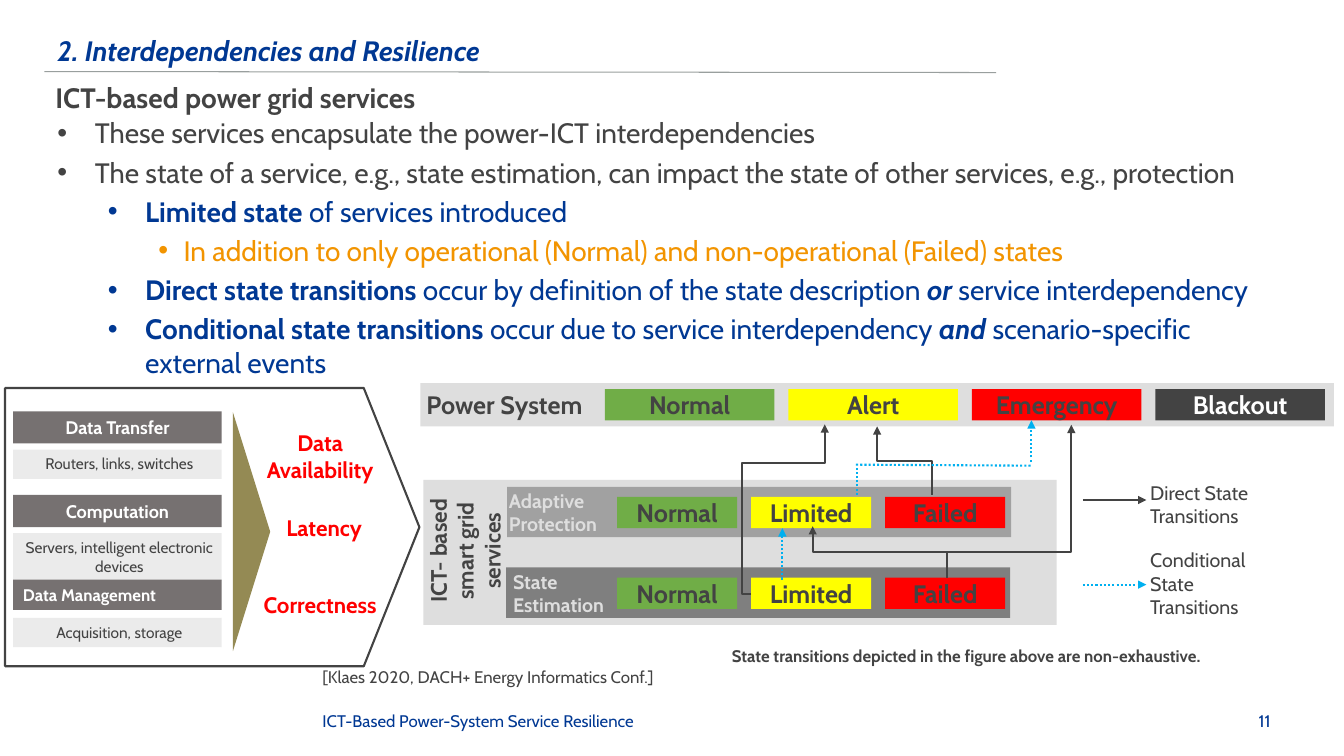
from dataclasses import dataclass

from lxml.etree import SubElement as Sub
from pptx import Presentation
from pptx.dml.color import RGBColor as Rgb
from pptx.enum.dml import MSO_LINE as Dash
from pptx.enum.shapes import MSO_CONNECTOR as Link, MSO_SHAPE as Form
from pptx.enum.text import MSO_ANCHOR as Anchor, MSO_AUTO_SIZE as Fit, PP_ALIGN as Align
from pptx.oxml.ns import qn
from pptx.shapes.shapetree import SlideShapes as Tree
from pptx.text.text import TextFrame as Frame
from pptx.util import Inches, Pt

FONT = "Cabin"
HUES = {
    "blue": "003893", "dark": "434343", "orange": "F29400", "rule": "999F9E",
    "sky": "00B0F0", "pale": "DEDEDE", "mid": "A1A1A1", "deep": "7F7F7F",
    "green": "70AD47", "yellow": "FFFF00", "red": "FF0000", "white": "FFFFFF",
    "head": "767171", "light": "D9D9D9", "olive": "948A54",
}
WIDE = (0.1, 0.05, 0.1, 0.05)
SLIM = (0.08, 0.04, 0.08, 0.04)


@dataclass
class Block:
    """A box or label; place is left, top, width, height."""
    place: tuple[float, float, float, float]
    text: str = ""
    size: float = 14
    hue: str = "dark"
    bold: bool = False
    align: Align = Align.LEFT
    anchor: Anchor = Anchor.TOP
    pad: tuple[float, float, float, float] = WIDE
    fill: str = ""
    edge: str = ""
    form: Form | None = None
    turn: float = 0
    bend: float | None = None
    alpha: int = 100


@dataclass
class Wire:
    """A straight line or arrow."""
    start: tuple[float, float]
    end: tuple[float, float]
    hue: str = "dark"
    width: float = 1.5
    dots: bool = False
    arrow: bool = True


@dataclass
class Elbow:
    """A bent arrow, framed before it is turned and flipped."""
    place: tuple[float, float, float, float]
    turn: int
    flips: str
    bends: tuple[float, ...]


@dataclass
class Point:
    """A list entry; bits pair the text with b and i marks."""
    level: int
    hue: str
    bits: list[tuple[str, str]]


def tint(name: str) -> Rgb:
    return Rgb.from_string(HUES[name])


def set_frame(frame: Frame, pad: tuple = WIDE, anchor: Anchor = Anchor.TOP) -> None:
    frame.word_wrap, frame.auto_size = True, Fit.NONE
    frame.vertical_anchor = anchor
    (frame.margin_left, frame.margin_top,
     frame.margin_right, frame.margin_bottom) = map(Inches, pad)


def style(run, size: float, hue: str, bold: bool, slant: bool = False) -> None:
    font = run.font
    font.name, font.size, font.bold, font.italic = FONT, Pt(size), bold, slant
    font.color.rgb = tint(hue)


def draw(tree: Tree, item: Block) -> None:
    place = map(Inches, item.place)
    if item.form is None:
        shape = tree.add_textbox(*place)
    else:
        shape = tree.add_shape(item.form, *place)
        shape.shadow.inherit = False
        if item.fill:
            shape.fill.solid()
            shape.fill.fore_color.rgb = tint(item.fill)
        else:
            shape.fill.background()
        if item.edge:
            shape.line.color.rgb = tint(item.edge)
            shape.line.width = Pt(1.5)
        else:
            shape.line.fill.background()
        if item.bend is not None:
            shape.adjustments[0] = item.bend
        if item.alpha < 100:
            tone = shape._element.spPr.find(f"{qn('a:solidFill')}/{qn('a:srgbClr')}")
            Sub(tone, qn("a:alpha"), val=str(item.alpha * 1000))
    shape.rotation = item.turn
    if item.text:
        frame = shape.text_frame
        set_frame(frame, item.pad, item.anchor)
        frame.text = item.text
        for par in frame.paragraphs:
            par.alignment = item.align
            for run in par.runs:
                style(run, item.size, item.hue, item.bold)


def draw_wire(tree: Tree, item: Wire, kind: Link = Link.STRAIGHT):
    wire = tree.add_connector(kind, *map(Inches, item.start + item.end))
    wire.line.color.rgb = tint(item.hue)
    wire.line.width = Pt(item.width)
    if item.dots:
        wire.line.dash_style = Dash.ROUND_DOT
    props = wire._element.spPr
    if item.arrow:
        Sub(props.find(qn("a:ln")), qn("a:tailEnd"), type="triangle")
    Sub(props, qn("a:effectLst"))
    return wire


def draw_elbow(tree: Tree, item: Elbow) -> None:
    x, y, w, h = item.place
    wire = draw_wire(tree, Wire((x, y), (x + w, y + h)), Link.ELBOW)
    props = wire._element.spPr
    frame, shape = props.find(qn("a:xfrm")), props.find(qn("a:prstGeom"))
    frame.set("rot", str(item.turn * 60000))
    for flip in item.flips:
        frame.set("flip" + flip, "1")
    shape.set("prst", f"bentConnector{len(item.bends) + 2}")
    guides = shape.find(qn("a:avLst"))
    for num, bend in enumerate(item.bends, 1):
        Sub(guides, qn("a:gd"), name=f"adj{num}", fmla=f"val {round(bend * 100000)}")


def fill_list(frame: Frame, points: list[Point]) -> None:
    set_frame(frame)
    dents = [(0.37, 0.37), (0.87, 0.37), (1.25, 0.25)]
    for num, point in enumerate(points):
        par = frame.add_paragraph() if num else frame.paragraphs[0]
        left, hang = dents[point.level]
        props = par._p.get_or_add_pPr()
        props.set("marL", str(Inches(left)))
        props.set("indent", str(-Inches(hang)))
        Sub(props, qn("a:buFont"), typeface="Arial")
        Sub(props, qn("a:buChar"), char="•")
        par.level = point.level
        par.space_before = Pt(4 if num else 0)
        for text, marks in point.bits:
            run = par.add_run()
            run.text = text
            style(run, 20, point.hue, "b" in marks, "i" in marks)


def state(x: float, y: float, w: float, text: str, fill: str, hue: str = "dark") -> Block:
    return Block((x, y, w, 0.31), text, 18, hue, True, Align.CENTER, Anchor.MIDDLE,
                 SLIM, fill, form=Form.RECTANGLE)


def panel(place: tuple, fill: str) -> Block:
    return Block(place, fill=fill, form=Form.RECTANGLE)


def main() -> None:
    deck = Presentation()
    deck.slide_width, deck.slide_height = Inches(13.33), Inches(7.5)
    slide = deck.slides.add_slide(deck.slide_layouts[1])
    tree = slide.shapes
    draw_wire(tree, Wire((0.44, 0.71), (9.88, 0.72), "rule", 0.75, arrow=False))

    # Title and list
    title, body = tree.title, slide.placeholders[1]
    for holder, place in ((title, (0.47, 0.27, 9.55, 0.45)), (body, (0.47, 1.1, 12.39, 5.41))):
        holder.left, holder.top, holder.width, holder.height = map(Inches, place)
    title.text_frame.text = "2. Interdependencies and Resilience"
    set_frame(title.text_frame, anchor=Anchor.MIDDLE)
    head = title.text_frame.paragraphs[0]
    head.alignment = Align.LEFT
    style(head.runs[0], 20, "blue", True, True)
    fill_list(body.text_frame, [
        Point(0, "dark", [("These services encapsulate the power-ICT interdependencies", "")]),
        Point(0, "dark", [("The state of a service, e.g., state estimation, can impact "
                           "the state of other services, e.g., protection", "")]),
        Point(1, "blue", [("Limited state", "b"), (" of services introduced", "")]),
        Point(2, "orange", [("In addition to only operational (Normal) and "
                             "non-operational (Failed) states", "")]),
        Point(1, "blue", [("Direct state transitions ", "b"),
                          ("occur by definition of the state description ", ""),
                          ("or", "bi"), (" service interdependency", "")]),
        Point(1, "blue", [("Conditional state transitions", "b"),
                          (" occur due to service interdependency ", ""),
                          ("and", "bi"), (" scenario-specific external events", "")]),
    ])

    # Legend
    for y, hue, top, high, text in ((4.96, "dark", 4.72, 0.57, "Direct State Transitions"),
                                    (5.8, "sky", 5.39, 0.81, "Conditional State Transitions")):
        draw_wire(tree, Wire((10.74, y), (11.37, y), hue, dots=hue == "sky"))
        draw(tree, Block((11.31, top, 1.4, high), text))

    # Service states
    draw(tree, panel((4.2, 4.76, 6.28, 1.44), "pale"))
    for x, y, fill, left, text in ((5.02, 5.63, "deep", 4.99, "State Estimation"),
                                   (5.03, 4.83, "mid", 4.95, "Adaptive\nProtection")):
        draw(tree, panel((x, y, 5, 0.5), fill))
        for col, (name, hue) in enumerate((("Normal", "green"), ("Limited", "yellow"),
                                           ("Failed", "red"))):
            draw(tree, state(6.12 + 1.33 * col, y + 0.1, 1.19, name, hue))
        draw(tree, Block((left, y - 0.03, 1.3, 0.57), text, 14, "pale", True))
    draw(tree, Block((3.89, 5.01, 1.45, 0.91), "ICT- based smart grid services", 16,
                     bold=True, align=Align.CENTER, turn=270))

    # Power system states
    draw(tree, panel((4.17, 3.8, 9.06, 0.43), "pale"))
    for col, (name, fill, hue) in enumerate((
            ("Normal", "green", "dark"), ("Alert", "yellow", "dark"),
            ("Emergency", "red", "dark"), ("Blackout", "dark", "white"))):
        draw(tree, state(6 + 1.82 * col, 3.86, 1.68, name, fill, hue))
    draw(tree, Block((4.13, 3.81, 1.99, 0.4), "Power System", 18, bold=True))

    # State transitions
    for elbow in (Elbow((9.37, 4.22, 1.26, 1.25), 90, "HV", (0,)),
                  Elbow((7.45, 4.21, 0.73, 1.68), 180, "H", (-0.12, 0.77)),
                  Elbow((8.63, 4.3, 0.68, 0.54), 270, "V", (0.5,)),
                  Elbow((8.47, 4.81, 0.51, 1.33), 270, "V", (0.5,))):
        draw_elbow(tree, elbow)
    for start, end, arrow in (((10.23, 4.58), (10.23, 4.17), True),
                              ((8.49, 4.61), (10.24, 4.62), False),
                              ((8.5, 4.91), (8.5, 4.6), False),
                              ((7.76, 5.75), (7.76, 5.24), True)):
        draw_wire(tree, Wire(start, end, "sky", dots=True, arrow=arrow))

    # ICT functions and their effects
    draw(tree, Block((0.05, 3.85, 4.11, 2.76), edge="dark", form=Form.PENTAGON, bend=0.2))
    for y, high, size, align, name, low, text in (
            (4.08, 0.32, 13, Align.CENTER, "Data Transfer", 0.29, "Routers, links, switches"),
            (4.91, 0.32, 13, Align.CENTER, "Computation", 0.47,
             "Servers, intelligent electronic devices"),
            (5.75, 0.3, 12, Align.LEFT, "Data Management", 0.29, "Acquisition, storage")):
        draw(tree, Block((0.13, y, 2.07, high), name, size, "white", True, align,
                         fill="head", form=Form.RECTANGLE))
        draw(tree, Block((0.13, y + 0.38, 2.07, low), text, 11, align=Align.CENTER,
                         pad=(0.08, 0.05, 0.04, 0.05), fill="light",
                         form=Form.RECTANGLE, alpha=50))
    for x, y, high, text in ((2.32, 4.21, 0.64, "Data Availability"),
                             (2.36, 5.05, 0.37, "Latency"), (2.32, 5.82, 0.37, "Correctness")):
        draw(tree, Block((x, y, 1.71, high), text, 16, "red", True, Align.CENTER))
    draw(tree, Block((1.31, 5.09, 2.37, 0.37), fill="olive", turn=90, bend=0.5,
                     form=Form.ISOSCELES_TRIANGLE))

    # Heading, notes and footer
    for label in (
            Block((0.45, 0.74, 9.55, 0.45), "ICT-based power grid services", 20, bold=True,
                  anchor=Anchor.MIDDLE),
            Block((7.16, 6.36, 5.7, 0.3), "State transitions depicted in the figure above "
                  "are non-exhaustive.", 12, bold=True),
            Block((3.1, 6.57, 8.57, 0.3), "[Klaes 2020, DACH+ Energy Informatics Conf.]", 12),
            Block((3.1, 6.95, 8.31, 0.4), "ICT-Based Power-System Service Resilience", 12,
                  "blue", anchor=Anchor.MIDDLE),
            Block((11.42, 6.95, 1.28, 0.4), "11", 12, "blue", align=Align.RIGHT,
                  anchor=Anchor.MIDDLE)):
        draw(tree, label)
    deck.save("out.pptx")


if __name__ == "__main__":
    main()
